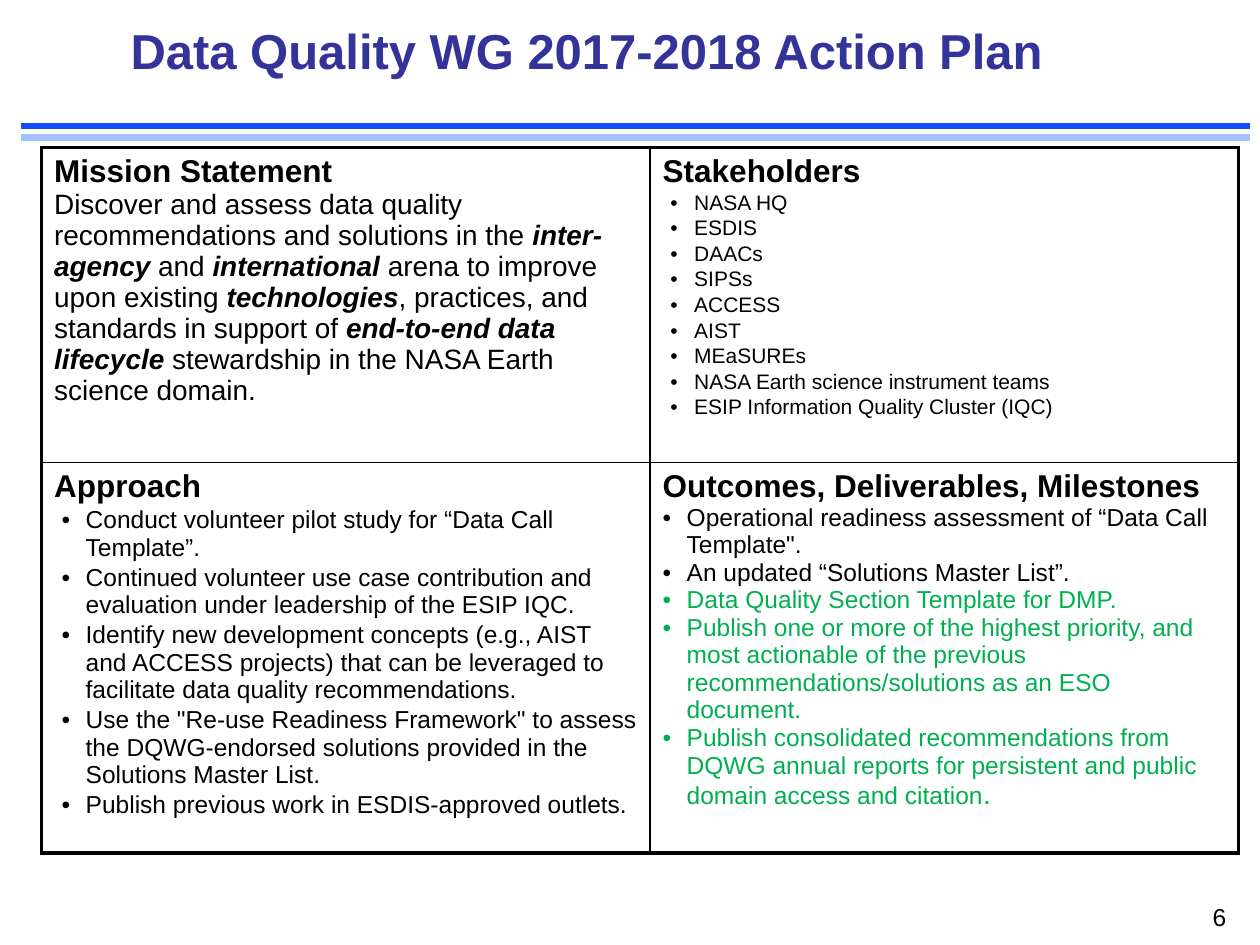
from lxml.etree import SubElement
from pptx import Presentation
from pptx.dml.color import RGBColor
from pptx.enum.shapes import MSO_CONNECTOR as Connector
from pptx.enum.text import MSO_ANCHOR as Anchor, PP_ALIGN as Align
from pptx.oxml.ns import qn
from pptx.util import Inches, Pt

BLACK, GREEN, NAVY = "000000", "00B050", "333399"
INNER, OUTER = 1, 2.25


def color(value):
    return RGBColor.from_string(value)


class ActionPlan:
    font_name = "Arial"

    def __init__(self, deck):
        self.page = deck.slides.add_slide(deck.slide_layouts[6])

    def span(self, para, text, size, tint=BLACK, bold=False, italic=False):
        span = para.add_run()
        span.text = text
        formats = {"name": self.font_name, "size": Pt(size), "bold": bold, "italic": italic}
        for name, value in formats.items():
            setattr(span.font, name, value)
        span.font.color.rgb = color(tint)

    def rule(self, top, tint):
        line = self.page.shapes.add_connector(
            Connector.STRAIGHT, Inches(0.17), Inches(top), Inches(9.92), Inches(top))
        line.line.color.rgb = color(tint)
        line.line.width = Pt(4)
        SubElement(line._element.spPr, qn("a:effectLst"))

    def text(self, area, text, size, tint, align, anchor, bold=False, spacing=1.0):
        box = self.page.shapes.add_textbox(*map(Inches, area))
        frame = box.text_frame
        frame.word_wrap = True
        frame.vertical_anchor = anchor
        para = frame.paragraphs[0]
        para.alignment = align
        para.line_spacing = spacing
        self.span(para, text, size, tint, bold)

    def bullet(self, frame, indent, size, gap, spans):
        para = frame.add_paragraph()
        props = para._p.get_or_add_pPr()
        props.set("marL", str(Inches(indent)))
        props.set("indent", str(-Inches(0.19)))
        SubElement(props, qn("a:buFont"), typeface=self.font_name)
        SubElement(props, qn("a:buChar"), char="•")
        para.space_before = Pt(gap)
        for text, tint, extra in spans:
            self.span(para, text, size + extra, tint)

    def borders(self, cell, widths):
        props = cell._tc.get_or_add_tcPr()
        for side, width in zip("LRTB", widths):
            line = SubElement(props, qn(f"a:ln{side}"), w=str(Pt(width)))
            fill = SubElement(line, qn("a:solidFill"))
            SubElement(fill, qn("a:srgbClr"), val=BLACK)
        cell.fill.background()

    def table(self, area, widths, heights, headings):
        table = self.page.shapes.add_table(
            len(heights), len(widths), *map(Inches, area)).table
        table.first_row = table.horz_banding = False
        for column, width in zip(table.columns, widths):
            column.width = Inches(width)
        for row, height in zip(table.rows, heights):
            row.height = Inches(height)
        frames = []
        for index, heading in enumerate(headings):
            row, column = divmod(index, len(widths))
            cell = table.cell(row, column)
            edges = (column == 0, column == len(widths) - 1, row == 0, row == len(heights) - 1)
            self.borders(cell, [OUTER if edge else INNER for edge in edges])
            self.span(cell.text_frame.paragraphs[0], heading, 18, bold=True)
            frames.append(cell.text_frame)
        return frames


MISSION = (
    "Discover and assess data quality recommendations and solutions in the *inter-agency* and "
    "*international* arena to improve upon existing *technologies*, practices, and standards "
    "in support of *end-to-end data lifecycle* stewardship in the NASA Earth science domain."
)
STAKEHOLDERS = [
    "NASA HQ", "ESDIS", "DAACs", "SIPSs", "ACCESS", "AIST", "MEaSUREs",
    "NASA Earth science instrument teams", "ESIP Information Quality Cluster (IQC)",
]
APPROACH = [
    "Conduct volunteer pilot study for “Data Call Template”.",
    "Continued volunteer use case contribution and evaluation under leadership of the ESIP IQC.",
    "Identify new development concepts (e.g., AIST and ACCESS projects) that can be leveraged "
    "to facilitate data quality recommendations.",
    "Use the \"Re-use Readiness Framework\" to assess the DQWG-endorsed solutions provided "
    "in the Solutions Master List.",
    "Publish previous work in ESDIS-approved outlets.",
]
OUTCOMES = [
    [("Operational readiness assessment of “Data Call Template\".", BLACK, 0)],
    [("An updated “Solutions Master List”.", BLACK, 0)],
    [("Data Quality Section Template for DMP.", GREEN, 0)],
    [("Publish one or more of the highest priority, and most actionable of the previous "
      "recommendations/solutions as an ESO document.", GREEN, 0)],
    [("Publish consolidated recommendations from DQWG annual reports for persistent and "
      "public domain access and citation", GREEN, 0), (".", GREEN, 2)],
]


def main():
    deck = Presentation()
    deck.slide_width, deck.slide_height = Inches(10), Inches(7.5)
    plan = ActionPlan(deck)
    plan.rule(1, "114FFB")
    plan.rule(1.09, "A2C1FE")
    plan.text((0.58, 0.04, 8.15, 0.79), "Data Quality WG 2017-2018 Action Plan", 28, NAVY,
              Align.CENTER, Anchor.MIDDLE, bold=True, spacing=0.85)
    plan.text((7.75, 7.11, 2.08, 0.39), "6", 14, BLACK, Align.RIGHT, Anchor.TOP)

    mission, stakeholders, approach, outcomes = plan.table(
        (0.33, 1.17, 9.5, 5.6), (4.83, 4.67), (2.5, 3.1),
        ("Mission Statement", "Stakeholders", "Approach", "Outcomes, Deliverables, Milestones"))
    para = mission.add_paragraph()
    for index, text in enumerate(MISSION.split("*")):
        strong = index % 2 == 1
        plan.span(para, text, 16, bold=strong, italic=strong)
    for frame, items, size in ((stakeholders, STAKEHOLDERS, 12), (approach, APPROACH, 14)):
        for item in items:
            plan.bullet(frame, 0.25, size, size * 0.1, [(item, BLACK, 0)])
    for spans in OUTCOMES:
        plan.bullet(outcomes, 0.19, 14, 0, spans)
    deck.save("out.pptx")


if __name__ == "__main__":
    main()
